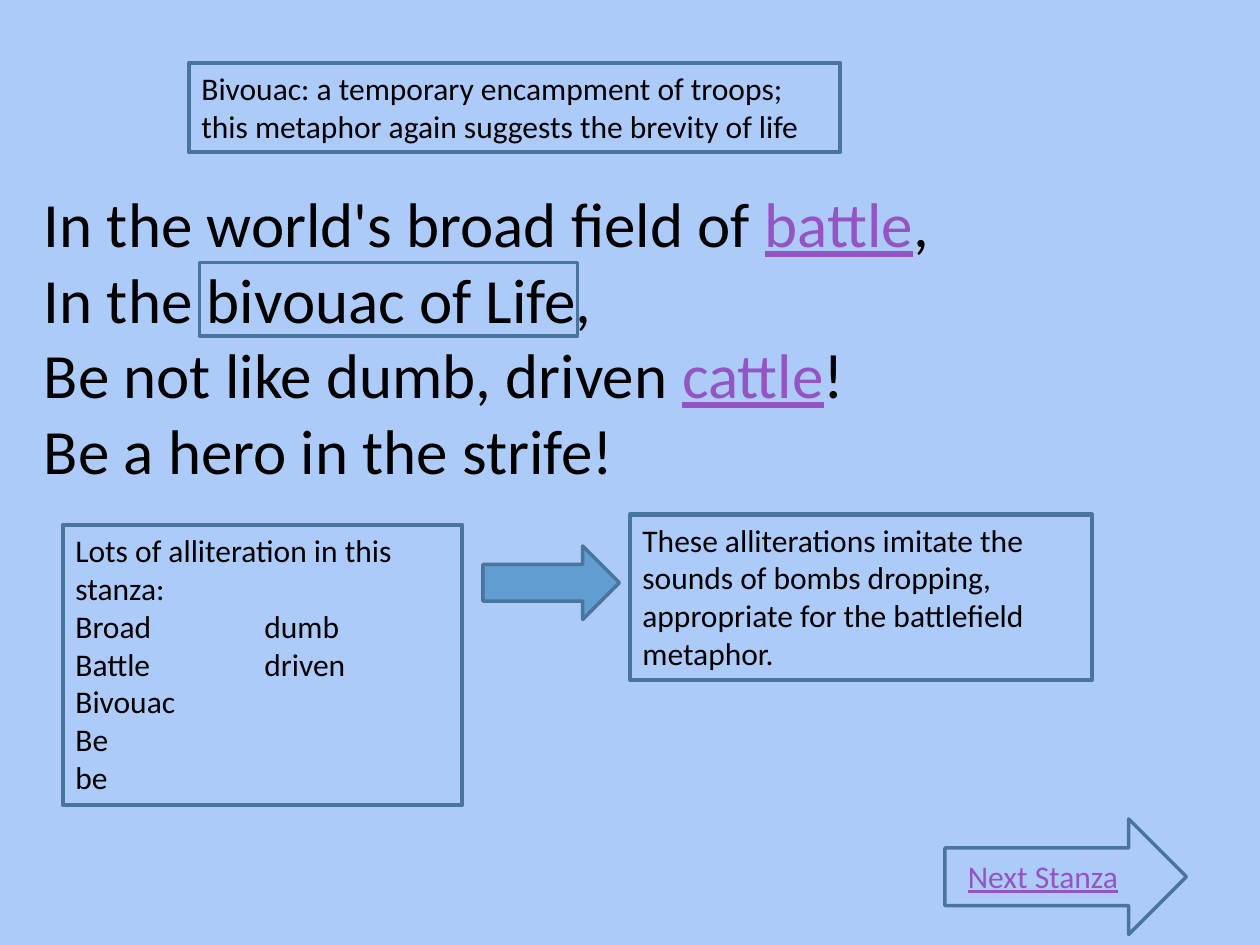
"""Build the stanza slide with its notes on alliteration and metaphor."""
from pptx import Presentation
from pptx.dml.color import RGBColor
from pptx.enum import shapes, text
from pptx.util import Pt

BACKGROUND = RGBColor(0xAC, 0xCB, 0xF9)
OUTLINE = RGBColor(0x49, 0x74, 0x9B)
ARROW_FILL = RGBColor(0x62, 0x9D, 0xD1)
BLACK = RGBColor(0, 0, 0)
PURPLE = RGBColor(0x94, 0x54, 0xC3)
FONT = "Calibri"

RECTANGLE = shapes.MSO_SHAPE.RECTANGLE
ARROW = shapes.MSO_SHAPE.RIGHT_ARROW

STANZA = [
    [("In the world's broad field of ", False), ("battle", True), (",", False)],
    [("In the bivouac of Life,", False)],
    [("Be not like dumb, driven ", False), ("cattle", True), ("!", False)],
    [("Be a hero in the strife!", False)],
]
ALLITERATION = [
    "Lots of alliteration in this stanza:",
    "Broad\t\tdumb",
    "Battle\t\tdriven",
    "Bivouac",
    "Be",
    "be",
]
EFFECT = ["These alliterations imitate the sounds of bombs dropping, "
          "appropriate for the battlefield metaphor."]
BIVOUAC = ["Bivouac: a temporary encampment of troops; "
           "this metaphor again suggests the brevity of life"]
NEXT = [[("Next Stanza", True)]]

OUTLINES = [
    (RECTANGLE, (36, 300, 228, 160), 2.5, None, ALLITERATION),
    (RECTANGLE, (360, 294, 264, 94.5), 2.5, None, EFFECT),
    (ARROW, (276, 312, 78, 42), 2, ARROW_FILL, []),
    (RECTANGLE, (114, 150, 216, 42), 2, None, []),
    (RECTANGLE, (108, 36, 372, 51), 2.5, None, BIVOUAC),
    (ARROW, (540, 468, 138, 66), 2, None, []),
]


def write(shape, lines, size=18, anchor=text.MSO_ANCHOR.TOP):
    """Fill a shape with lines, each a string or a list of (words, marked) runs."""
    frame = shape.text_frame
    frame.word_wrap = True
    frame.vertical_anchor = anchor
    for index, line in enumerate(lines):
        paragraph = frame.add_paragraph() if index else frame.paragraphs[0]
        paragraph.alignment = text.PP_ALIGN.LEFT
        for words, marked in [(line, False)] if isinstance(line, str) else line:
            run = paragraph.add_run()
            run.text = words
            run.font.name = FONT
            run.font.size = Pt(size)
            run.font.underline = marked
            run.font.color.rgb = PURPLE if marked else BLACK


def add_text(slide, box, lines, **style):
    write(slide.shapes.add_textbox(*map(Pt, box)), lines, **style)


def add_outline(slide, kind, box, width, fill, lines):
    shape = slide.shapes.add_shape(kind, *map(Pt, box))
    shape.shadow.inherit = False
    shape.line.color.rgb = OUTLINE
    shape.line.width = Pt(width)
    if fill is None:
        shape.fill.background()
    else:
        shape.fill.solid()
        shape.fill.fore_color.rgb = fill
    if lines:
        write(shape, lines)


def main():
    presentation = Presentation()
    presentation.slide_width, presentation.slide_height = Pt(720), Pt(540)
    slide = presentation.slides.add_slide(presentation.slide_layouts[6])
    slide.background.fill.solid()
    slide.background.fill.fore_color.rgb = BACKGROUND
    add_text(slide, (18, 102, 642, 181.5), STANZA, size=36)
    for outline in OUTLINES:
        add_outline(slide, *outline)
    add_text(slide, (546, 486, 156, 29), NEXT)
    presentation.save("out.pptx")


if __name__ == "__main__":
    main()
